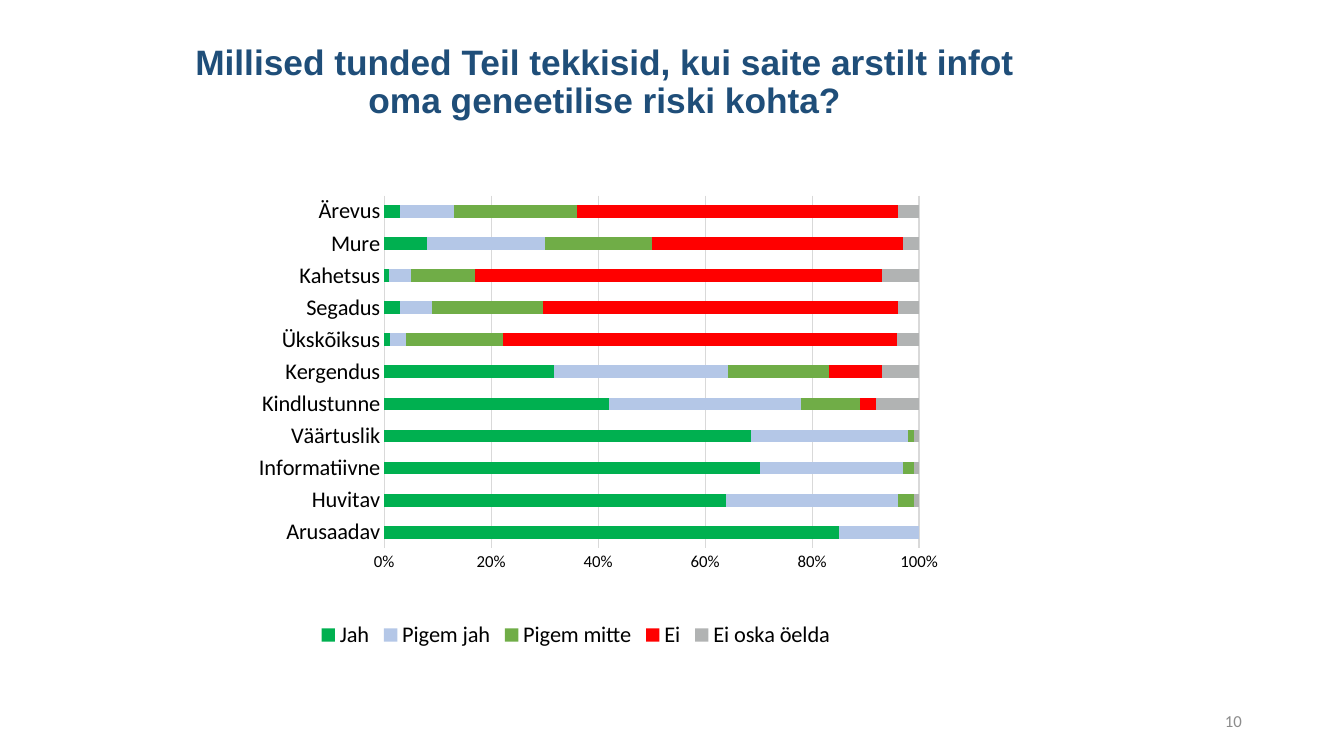
from lxml.etree import SubElement
from pptx import Presentation
from pptx.chart.data import CategoryChartData
from pptx.dml.color import RGBColor
from pptx.enum.chart import XL_CHART_TYPE as ChartType, XL_LEGEND_POSITION as LegendPosition
from pptx.enum.chart import XL_TICK_MARK as TickMark
from pptx.enum.text import MSO_ANCHOR as Anchor, PP_ALIGN as Align
from pptx.oxml.ns import qn
from pptx.util import Cm, Pt


def color(hex_string):
    return RGBColor.from_string(hex_string)


def style_font(font, name, size, hex_string, bold=False):
    font.name = name
    font.size = Pt(size)
    font.bold = bold
    font.color.rgb = color(hex_string)


presentation = Presentation()
presentation.slide_width = Cm(33.87)
presentation.slide_height = Cm(19.05)
slide = presentation.slides.add_slide(presentation.slide_layouts[6])

# Title and slide number
texts = [
    (["Millised tunded Teil tekkisid, kui saite arstilt infot", "oma geneetilise riski kohta?"],
     (0, 1.14, 30.48, 1.9), Align.CENTER, 0.9, ("Arial", 25.2, "1F4E79", True)),
    (["10"], (23.93, 17.65, 7.62, 1.02), Align.RIGHT, 1.0, ("Calibri", 12, "8C8C8C")),
]
for lines, box, alignment, spacing, font_style in texts:
    frame = slide.shapes.add_textbox(*map(Cm, box)).text_frame
    frame.word_wrap = True
    frame.vertical_anchor = Anchor.MIDDLE
    paragraph = frame.paragraphs[0]
    paragraph.alignment = alignment
    paragraph.line_spacing = spacing
    for index, line in enumerate(lines):
        if index:
            paragraph.add_line_break()
        run = paragraph.add_run()
        run.text = line
        style_font(run.font, *font_style)

# Chart data
feelings = ["Arusaadav", "Huvitav", "Informatiivne", "Väärtuslik", "Kindlustunne", "Kergendus",
            "Ükskõiksus", "Segadus", "Kahetsus", "Mure", "Ärevus"]
answers = [
    ("Jah", "00B050", [85, 64, 71, 68, 42, 32, 1, 3, 1, 8, 3]),
    ("Pigem jah", "B4C7E7", [15, 32, 27, 29, 36, 33, 3, 6, 4, 22, 10]),
    ("Pigem mitte", "70AD47", [0, 3, 2, 1, 11, 19, 18, 21, 12, 20, 23]),
    ("Ei", "FF0000", [0, 0, 0, 0, 3, 10, 73, 67, 76, 47, 60]),
    ("Ei oska öelda", "B1B3B3", [0, 1, 1, 1, 8, 7, 4, 4, 7, 3, 4]),
]
chart_data = CategoryChartData()
chart_data.categories = feelings
for name, _, values in answers:
    chart_data.add_series(name, values)

# Stacked bar chart
chart = slide.shapes.add_chart(
    ChartType.BAR_STACKED_100, Cm(4.45), Cm(4.45), Cm(20.12), Cm(12.01), chart_data).chart
chart.has_title = False
style_font(chart.font, "Calibri", 10, "000000")
plot = chart.plots[0]
plot.gap_width = 150
plot.overlap = 100
plot.vary_by_categories = False
for series, (_, fill_color, _) in zip(plot.series, answers):
    series.format.fill.solid()
    series.format.fill.fore_color.rgb = color(fill_color)

# Axes
category_axis, value_axis = chart.category_axis, chart.value_axis
for axis, size in ((category_axis, 16), (value_axis, 12)):
    axis.major_tick_mark = axis.minor_tick_mark = TickMark.NONE
    style_font(axis.tick_labels.font, "Calibri", size, "000000")
value_axis.format.line.fill.background()
value_axis.major_unit = 0.2
value_axis.has_major_gridlines = True
value_axis.tick_labels.number_format = "0%"
value_axis.tick_labels.number_format_is_linked = False
for line in (category_axis.format.line, value_axis.major_gridlines.format.line):
    line.color.rgb = color("D9D9D9")
    line.width = Pt(0.75)

# Legend
chart.has_legend = True
chart.legend.position = LegendPosition.BOTTOM
chart.legend.include_in_layout = False
style_font(chart.legend.font, "Calibri", 16, "000000")

# Fixed plot area inside the chart
plot_area = plot._element.getparent()
for old_layout in plot_area.findall(qn("c:layout")):
    plot_area.remove(old_layout)
layout = SubElement(plot_area, qn("c:layout"))
plot_area.insert(0, layout)
manual_layout = SubElement(layout, qn("c:manualLayout"))
for tag, value in (("layoutTarget", "inner"), ("xMode", "edge"), ("yMode", "edge"),
                   ("x", "0.26"), ("y", "0.04"), ("w", "0.67"), ("h", "0.74")):
    SubElement(manual_layout, qn(f"c:{tag}")).set("val", value)

presentation.save("out.pptx")
